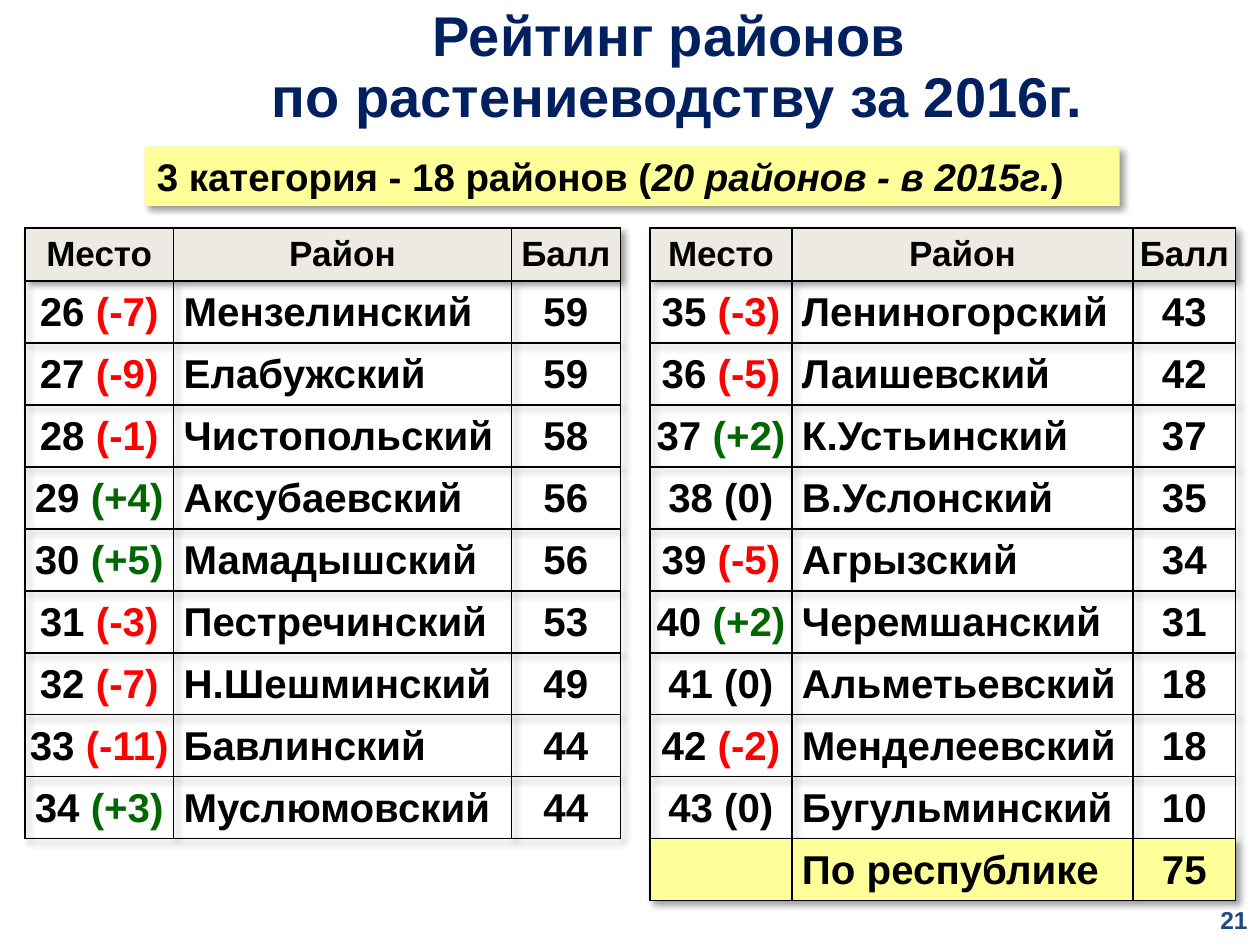
from dataclasses import dataclass

from lxml import etree
from pptx import Presentation
from pptx.dml.color import RGBColor
from pptx.enum.shapes import MSO_SHAPE
from pptx.enum.text import MSO_ANCHOR, PP_ALIGN
from pptx.oxml import parse_xml
from pptx.oxml.ns import nsdecls, qn
from pptx.util import Pt

LEFT, MID, RIGHT = PP_ALIGN.LEFT, PP_ALIGN.CENTER, PP_ALIGN.RIGHT
TOP, CENTRE = MSO_ANCHOR.TOP, MSO_ANCHOR.MIDDLE
RECT = MSO_SHAPE.RECTANGLE

FONT = "Arial"
HEX = {
    "text": "000000", "title": "002060", "page": "1F497D",
    "head": "ECEAE2", "note": "FFFF99", "down": "FF0000", "up": "006600",
}
HEADS = ("Место", "Район", "Балл")
HEAD_H, ROW_H = 30.3, 35.43


@dataclass
class Run:
    text: str
    size: float
    color: str = "text"
    slant: bool = False


@dataclass
class Row:
    place: str
    move: str
    name: str
    score: int


@dataclass
class Grid:
    left: float
    top: float
    cols: tuple[float, ...]
    rows: list[Row]
    total: Row | None = None


def rgb(key: str) -> RGBColor:
    return RGBColor.from_string(HEX[key])


def shade():
    """Soft shadow down and to the right."""
    return parse_xml(
        f'<a:effectLst {nsdecls("a")}><a:outerShdw blurRad="{Pt(4)}" dist="{Pt(3)}" '
        f'dir="2700000" algn="tl" rotWithShape="0"><a:srgbClr val="{HEX["text"]}">'
        '<a:alpha val="40000"/></a:srgbClr></a:outerShdw></a:effectLst>')


def write(para, runs: list[Run], align=LEFT) -> None:
    para.alignment = align
    for part in runs:
        run = para.add_run()
        run.text = part.text
        font = run.font
        font.name, font.size = FONT, Pt(part.size)
        font.bold, font.italic = True, part.slant
        font.color.rgb = rgb(part.color)


def add_text(slide, box: tuple[float, ...], lines: list[Run],
             align, anchor=TOP, space: float | None = None) -> None:
    frame = slide.shapes.add_textbox(*map(Pt, box)).text_frame
    frame.word_wrap = True
    frame.vertical_anchor = anchor
    for i, line in enumerate(lines):
        para = frame.add_paragraph() if i else frame.paragraphs[0]
        write(para, [line], align)
        if space:
            para.line_spacing = Pt(space)


def add_banner(slide, box: tuple[float, ...], runs: list[Run]) -> None:
    shape = slide.shapes.add_shape(RECT, *map(Pt, box))
    shape.fill.solid()
    shape.fill.fore_color.rgb = rgb("note")
    shape.line.fill.background()
    shape._element.spPr.append(shade())
    frame = shape.text_frame
    frame.word_wrap = True
    frame.vertical_anchor = TOP
    write(frame.paragraphs[0], runs)


def edge(cell) -> None:
    """Thin black line on all four sides, placed before the fill."""
    props = cell._tc.get_or_add_tcPr()
    for i, side in enumerate(("lnL", "lnR", "lnT", "lnB")):
        line = etree.Element(qn("a:" + side), w=str(Pt(1)))
        fill = etree.SubElement(line, qn("a:solidFill"))
        etree.SubElement(fill, qn("a:srgbClr"), val=HEX["text"])
        props.insert(i, line)


def set_cell(cell, runs: list[Run], align, fill: str | None, pads: tuple) -> None:
    cell.margin_left, cell.margin_top, cell.margin_right, cell.margin_bottom = map(Pt, pads)
    cell.vertical_anchor = CENTRE
    if fill:
        cell.fill.solid()
        cell.fill.fore_color.rgb = rgb(fill)
    else:
        cell.fill.background()
    edge(cell)
    write(cell.text_frame.paragraphs[0], runs, align)


def place_runs(row: Row) -> list[Run]:
    if not row.place:
        return []
    tone = {"-": "down", "+": "up"}.get(row.move[0], "text")
    return [Run(row.place + " ", 23), Run(f"({row.move})", 23, tone)]


def add_grid(slide, grid: Grid) -> None:
    rows = grid.rows + ([grid.total] if grid.total else [])
    high = HEAD_H + ROW_H * len(rows)
    table = slide.shapes.add_table(
        len(rows) + 1, len(grid.cols), Pt(grid.left), Pt(grid.top),
        Pt(sum(grid.cols)), Pt(high)).table
    table.horz_banding = False
    table._tbl.tblPr.insert(0, shade())
    for col, wide in zip(table.columns, grid.cols):
        col.width = Pt(wide)
    for i, line in enumerate(table.rows):
        line.height = Pt(ROW_H if i else HEAD_H)

    for j, head in enumerate(HEADS):
        set_cell(table.cell(0, j), [Run(head, 20)], MID, "head", (0, 0, 0, 0))
    for i, row in enumerate(rows, 1):
        fill = "note" if row is grid.total else None
        parts = (
            (place_runs(row), MID, 0.7),
            ([Run(row.name, 23)], LEFT, 5.8),
            ([Run(str(row.score), 23)], MID, 0.7),
        )
        for j, (runs, align, pad) in enumerate(parts):
            set_cell(table.cell(i, j), runs, align, fill, (pad, 0.7, 0.7, 0))


def rank(start: int, data: list[tuple[str, str, int]]) -> list[Row]:
    return [Row(str(n), *item) for n, item in enumerate(data, start)]


FIRST = rank(26, [
    ("-7", "Мензелинский", 59), ("-9", "Елабужский", 59), ("-1", "Чистопольский", 58),
    ("+4", "Аксубаевский", 56), ("+5", "Мамадышский", 56), ("-3", "Пестречинский", 53),
    ("-7", "Н.Шешминский", 49), ("-11", "Бавлинский", 44), ("+3", "Муслюмовский", 44),
])
SECOND = rank(35, [
    ("-3", "Лениногорский", 43), ("-5", "Лаишевский", 42), ("+2", "К.Устьинский", 37),
    ("0", "В.Услонский", 35), ("-5", "Агрызский", 34), ("+2", "Черемшанский", 31),
    ("0", "Альметьевский", 18), ("-2", "Менделеевский", 18), ("0", "Бугульминский", 10),
])
GRIDS = (
    Grid(14.2, 130.3, (85, 193, 62.4), FIRST),
    Grid(371.5, 130.3, (81, 195, 58.6), SECOND, Row("", "", "По республике", 75)),
)


def main() -> None:
    deck = Presentation()
    deck.slide_width, deck.slide_height = Pt(720), Pt(540)
    slide = deck.slides.add_slide(deck.slide_layouts[6])

    # Category banner
    add_banner(slide, (82.6, 83.8, 557.3, 33.9), [
        Run("3 категория - 18 районов (", 22),
        Run("20 районов - в 2015г.", 22, slant=True),
        Run(")", 22),
    ])

    # Title
    add_text(slide, (54, 0, 666, 77.6), [
        Run("Рейтинг районов ", 32, "title"),
        Run("по растениеводству за 2016г.", 32, "title"),
    ], MID, space=35)

    # Ranking tables
    for grid in GRIDS:
        add_grid(slide, grid)

    # Page number
    add_text(slide, (552, 511.2, 168, 28.8), [Run("21", 14, "page")], RIGHT, CENTRE)

    deck.save("out.pptx")


if __name__ == "__main__":
    main()
